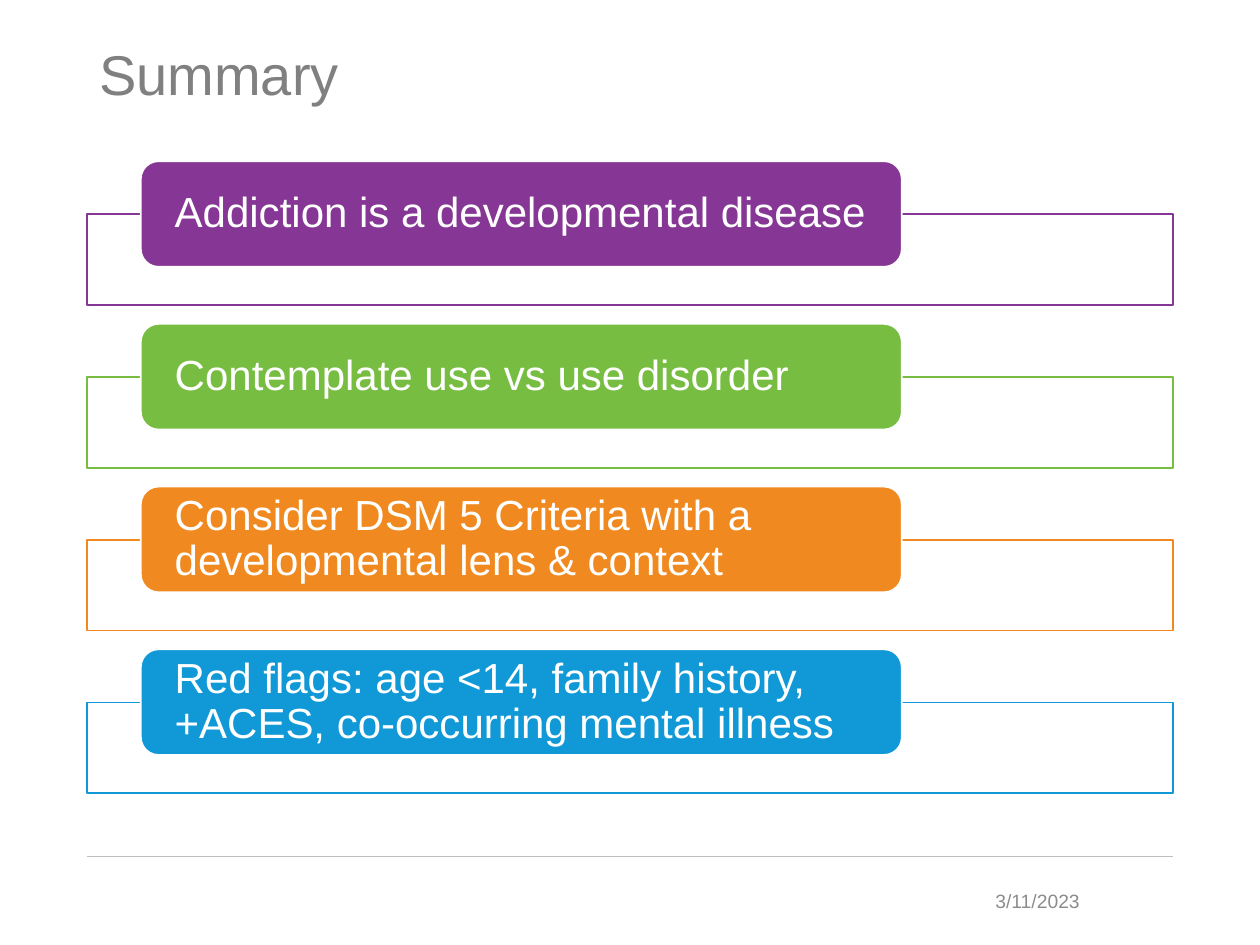
from lxml.etree import SubElement
from pptx import Presentation
from pptx.dml.color import RGBColor
from pptx.enum.shapes import MSO_CONNECTOR, MSO_SHAPE
from pptx.enum.text import MSO_ANCHOR, PP_ALIGN
from pptx.oxml.ns import qn
from pptx.util import Cm, Pt

WHITE = RGBColor(0xFF, 0xFF, 0xFF)
TITLE_GRAY = RGBColor(0x80, 0x80, 0x80)
DATE_GRAY = RGBColor(0x8C, 0x8C, 0x8C)
RULE_GRAY = RGBColor(0xBF, 0xBF, 0xBF)
PURPLE = RGBColor(0x86, 0x36, 0x94)
GREEN = RGBColor(0x77, 0xBD, 0x42)
ORANGE = RGBColor(0xF0, 0x8A, 0x20)
BLUE = RGBColor(0x10, 0x99, 0xD6)

LEFT, WIDTH = 1.75, 21.9
FIRST_TOP, ROW_PITCH = 3.25, 3.28
POINTS = [
    ("Addiction is a developmental disease", PURPLE),
    ("Contemplate use vs use disorder", GREEN),
    ("Consider DSM 5 Criteria with a developmental lens & context", ORANGE),
    ("Red flags: age <14, family history, +ACES, co-occurring mental illness", BLUE),
]


def add_block(page, kind, left, top, width, height, fill, line):
    block = page.shapes.add_shape(kind, Cm(left), Cm(top), Cm(width), Cm(height))
    block.shadow.inherit = False
    block.fill.solid()
    block.fill.fore_color.rgb = fill
    block.line.color.rgb = line
    block.line.width = Pt(1)
    return block


def write_text(box, text, size, color, align=PP_ALIGN.LEFT, spacing=None):
    frame = box.text_frame
    frame.word_wrap = True
    frame.vertical_anchor = MSO_ANCHOR.MIDDLE
    para = frame.paragraphs[0]
    para.alignment = align
    para.line_spacing = spacing
    span = para.add_run()
    span.text = text
    span.font.name = "Arial"
    span.font.size = Pt(size)
    span.font.color.rgb = color


deck = Presentation()
deck.slide_width = Cm(25.4)
deck.slide_height = Cm(19.05)
page = deck.slides.add_slide(deck.slide_layouts[6])

footer_rule = page.shapes.add_connector(
    MSO_CONNECTOR.STRAIGHT, Cm(LEFT), Cm(17.27), Cm(LEFT + WIDTH), Cm(17.27))
footer_rule.line.color.rgb = RULE_GRAY
footer_rule.line.width = Pt(0.5)
SubElement(footer_rule._element.spPr, qn("a:effectLst"))

title = page.shapes.add_textbox(Cm(LEFT), Cm(0), Cm(WIDTH), Cm(3.12))
write_text(title, "Summary", 32, TITLE_GRAY, spacing=0.9)

date = page.shapes.add_textbox(Cm(18.64), Cm(17.65), Cm(3.38), Cm(1.02))
write_text(date, "3/11/2023", 11, DATE_GRAY, align=PP_ALIGN.RIGHT)

for row, (text, color) in enumerate(POINTS):
    top = FIRST_TOP + row * ROW_PITCH
    panel = add_block(page, MSO_SHAPE.RECTANGLE, LEFT, top + 1.07, WIDTH, 1.83,
                      WHITE, color)
    panel_color = panel._element.spPr.find(qn("a:solidFill"))[0]
    SubElement(panel_color, qn("a:alpha"), val="90000")

    label = add_block(page, MSO_SHAPE.ROUNDED_RECTANGLE, 2.84, top, 15.34, 2.13,
                      color, WHITE)
    frame = label.text_frame
    frame.margin_left = frame.margin_right = Cm(0.58)
    frame.margin_top = frame.margin_bottom = Cm(0)
    write_text(label, text, 24, WHITE, spacing=0.9)

deck.save("out.pptx")
